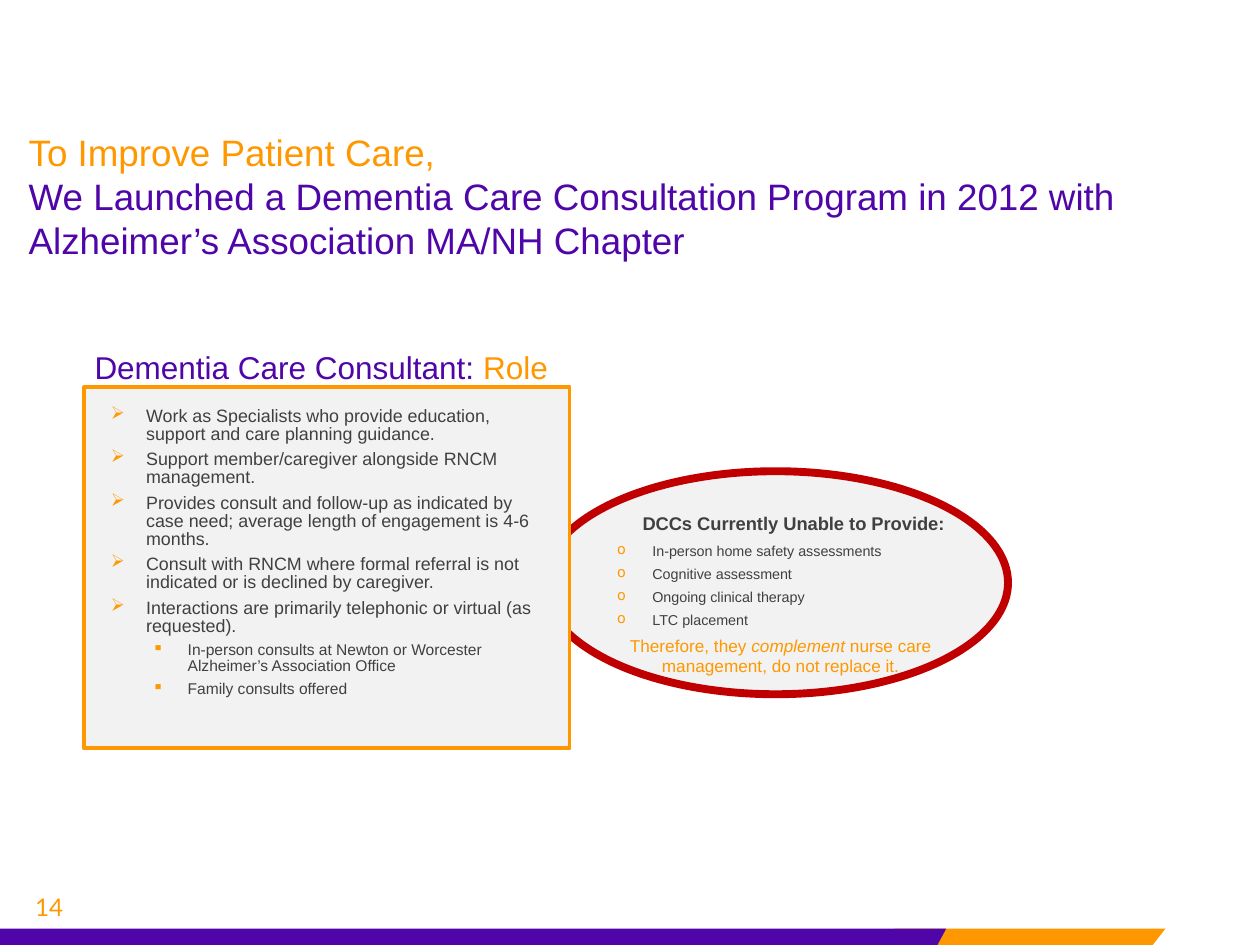
from lxml.etree import SubElement
from pptx import Presentation
from pptx.dml.color import RGBColor
from pptx.enum.shapes import MSO_SHAPE
from pptx.enum.text import MSO_ANCHOR, MSO_AUTO_SIZE, PP_ALIGN
from pptx.oxml.ns import qn
from pptx.util import Inches, Pt

PURPLE = RGBColor(0x4F, 0x05, 0xA8)
ORANGE = RGBColor(0xFF, 0x98, 0x00)
RED = RGBColor(0xC0, 0x00, 0x00)
GRAY = RGBColor(0x41, 0x40, 0x41)
PANEL = RGBColor(0xF2, 0xF2, 0xF2)

HEADLINE = [
    ("To Improve Patient Care,", ORANGE),
    ("We Launched a Dementia Care Consultation Program in 2012 with "
     "Alzheimer’s Association MA/NH Chapter", PURPLE),
]
TITLE = [("Dementia Care Consultant: ", PURPLE), ("Role", ORANGE)]
DUTIES = [
    "Work as Specialists who provide education, support and care planning guidance.",
    "Support member/caregiver alongside RNCM management.",
    "Provides consult and follow-up as indicated by case need; "
    "average length of engagement is 4-6 months.",
    "Consult with RNCM where formal referral is not indicated or is declined by caregiver.",
    "Interactions are primarily telephonic or virtual (as requested).",
]
CONSULTS = [
    "In-person consults at Newton or Worcester Alzheimer’s Association Office",
    "Family consults offered",
]
LIMITS_HEADING = "DCCs Currently Unable to Provide:"
LIMITS = [
    "In-person home safety assessments",
    "Cognitive assessment",
    "Ongoing clinical therapy",
    "LTC placement",
]
CONCLUSION = [
    ("Therefore, they ", False),
    ("complement", True),
    (" nurse care management, do not replace it.", False),
]
PAGE_NUMBER = "14"


def add_run(p, text, size, color, font="Arial", bold=False, italic=False):
    r = p.add_run()
    r.text = text
    r.font.name = font
    r.font.size = Pt(size)
    r.font.color.rgb = color
    r.font.bold = bold
    r.font.italic = italic


def next_paragraph(tf):
    p = tf.paragraphs[0]
    return tf.add_paragraph() if p.runs else p


def add_text_box(s, left, top, width, height, inset=None):
    tf = s.shapes.add_textbox(
        Inches(left), Inches(top), Inches(width), Inches(height)).text_frame
    tf.word_wrap = True
    if inset is not None:
        set_insets(tf, inset)
    return tf


def set_insets(tf, inset):
    tf.margin_left = tf.margin_right = Inches(inset)
    tf.margin_top = tf.margin_bottom = Inches(inset)


def add_bullets(tf, items, char, size, indent, spacing, after, level=0):
    for text in items:
        p = next_paragraph(tf)
        p.level = level
        pPr = p._p.get_or_add_pPr()
        pPr.set("marL", str(Inches(indent)))
        pPr.set("indent", str(Inches(-0.28)))
        color = SubElement(pPr, qn("a:buClr"))
        SubElement(color, qn("a:srgbClr")).set("val", str(ORANGE))
        SubElement(pPr, qn("a:buChar")).set("char", char)
        p.line_spacing = spacing
        p.space_after = Pt(after)
        add_run(p, text, size, GRAY)


def paint(shape, fill, line=None, width=0):
    shape.shadow.inherit = False
    shape.fill.solid()
    shape.fill.fore_color.rgb = fill
    if line is None:
        shape.line.fill.background()
    else:
        shape.line.color.rgb = line
        shape.line.width = Pt(width)


def add_panel(s, kind, left, top, width, height, fill, line=None, line_width=0):
    shape = s.shapes.add_shape(
        kind, Inches(left), Inches(top), Inches(width), Inches(height))
    paint(shape, fill, line, line_width)
    return shape


def add_footer(s):
    accent = add_panel(s, MSO_SHAPE.PARALLELOGRAM, 7, 7.37, 2.25, 0.13, ORANGE)
    accent.adjustments[0] = 0.78
    corners = [(Inches(x), Inches(y)) for x, y in
               [(0, 7.37), (7.51, 7.37), (7.44, 7.5), (0, 7.5)]]
    builder = s.shapes.build_freeform(*corners[0])
    builder.add_line_segments(corners[1:], close=True)
    paint(builder.convert_to_shape(), PURPLE)

    p = add_text_box(s, 0.18, 7.08, 2.33, 0.3).paragraphs[0]
    p.line_spacing = 0.8
    add_run(p, PAGE_NUMBER, 13.9, ORANGE, font="Lato")


def add_limits(s):
    add_panel(s, MSO_SHAPE.FLOWCHART_CONNECTOR, 4.31, 3.74, 3.69, 1.77, PANEL, RED, 4.5)
    tf = add_text_box(s, 4.47, 4.01, 3.33, 1.54)
    p = tf.paragraphs[0]
    p.level = 1
    p._p.get_or_add_pPr().set("marL", str(Inches(0.33)))
    p.alignment = PP_ALIGN.CENTER
    p.line_spacing = 1.03
    p.space_after = Pt(4.5)
    add_run(p, LIMITS_HEADING, 10.5, GRAY, bold=True)
    add_bullets(tf, LIMITS, "o", 8.2, 0.61, 1.03, 3, level=1)

    p = add_text_box(s, 4.62, 4.99, 3.15, 0.43).paragraphs[0]
    p.alignment = PP_ALIGN.CENTER
    for text, italic in CONCLUSION:
        add_run(p, text, 9.8, ORANGE, italic=italic)


def add_role(s):
    add_panel(s, MSO_SHAPE.RECTANGLE, 0.67, 3.07, 3.85, 2.87, PANEL, ORANGE, 2.25)
    tf = add_text_box(s, 0.88, 3.24, 3.49, 2.44, inset=0)
    add_bullets(tf, DUTIES, "➢", 10.2, 0.28, 0.83, 4.5)
    add_bullets(tf, CONSULTS, "▪", 8.9, 0.61, 0.83, 4.5, level=1)


def add_title(s):
    title = s.shapes.title
    title.left, title.top = Inches(0.75), Inches(2.77)
    title.width, title.height = Inches(3.69), Inches(0.32)
    tf = title.text_frame
    tf.auto_size = MSO_AUTO_SIZE.NONE
    tf.vertical_anchor = MSO_ANCHOR.MIDDLE
    set_insets(tf, 0)
    p = tf.paragraphs[0]
    p.alignment = PP_ALIGN.LEFT
    p.line_spacing = 0.9
    for text, color in TITLE:
        add_run(p, text, 18, color)


def add_headline(s):
    tf = add_text_box(s, 0.13, 0.98, 9.44, 1.16)
    for text, color in HEADLINE:
        add_run(next_paragraph(tf), text, 21, color)


def main():
    prs = Presentation()
    prs.slide_width, prs.slide_height = Inches(10), Inches(7.5)
    s = prs.slides.add_slide(prs.slide_layouts[5])
    add_title(s)
    add_footer(s)
    add_limits(s)
    add_role(s)
    add_headline(s)
    prs.save("out.pptx")


if __name__ == "__main__":
    main()
